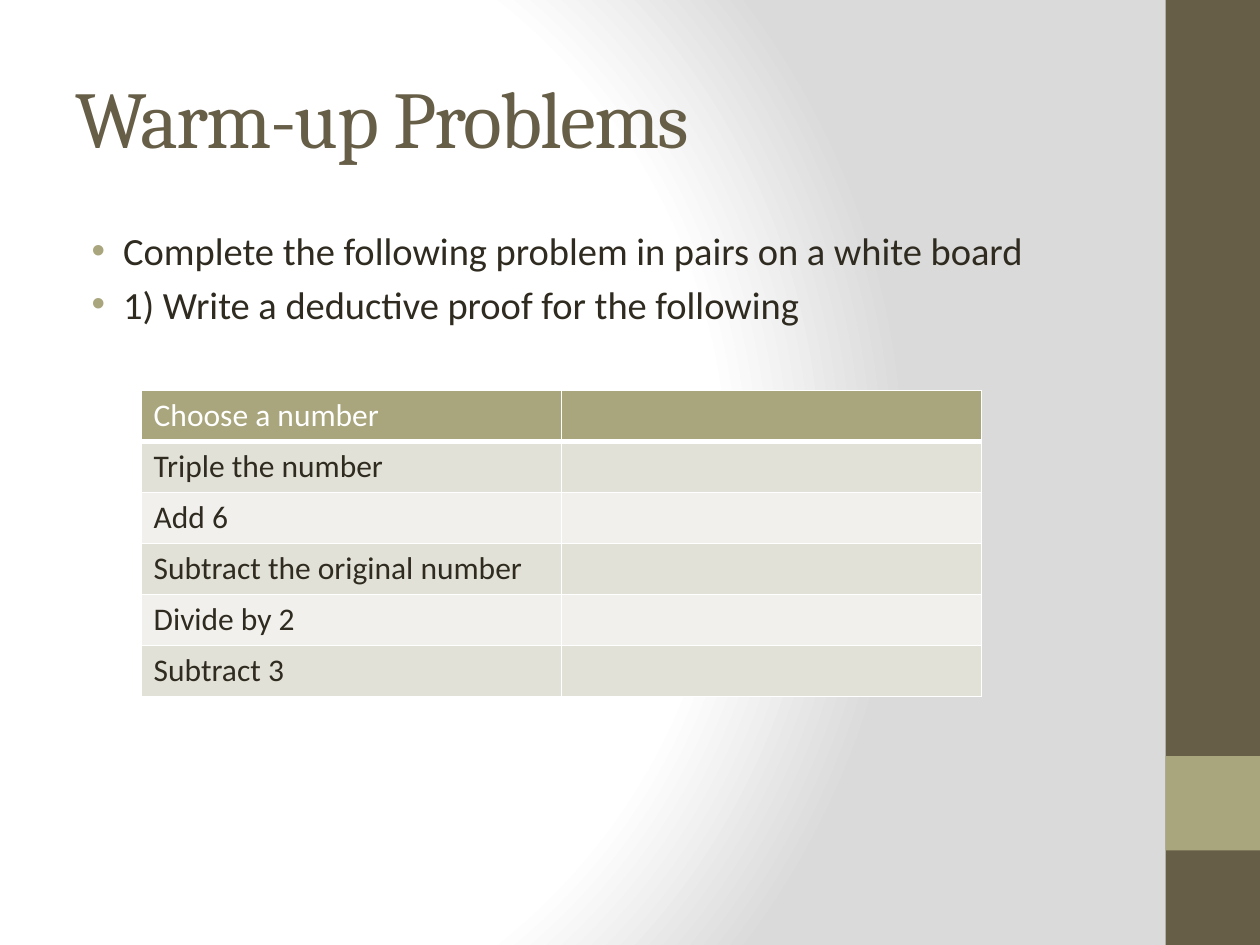
import pptx
import pptx.dml.color
import pptx.enum.shapes
import pptx.enum.text
import pptx.oxml
import pptx.oxml.ns
import pptx.util

Inches, Pt = pptx.util.Inches, pptx.util.Pt
NS = pptx.oxml.ns.nsdecls("a")
BROWN, OLIVE, INK, WHITE = "675E47", "A9A57C", "2F2B20", "FFFFFF"
BANDS = ["F1F0EC", "E2E1D7"]
WIDE, HIGH = Inches(10), Inches(7.5)


def rgb(code):
    return pptx.dml.color.RGBColor.from_string(code)


def style(para, size, name, code):
    """Give a paragraph's runs their font."""
    for run in para.runs:
        form = {"size": Pt(size), "name": name}
        for key, value in form.items():
            setattr(run.font, key, value)
        run.font.color.rgb = rgb(code)


deck = pptx.Presentation()
deck.slide_width, deck.slide_height = WIDE, HIGH
slide = deck.slides.add_slide(deck.slide_layouts[6])

# Background: circular gradient from white to grey
slide.background.fill.gradient()
grad = slide.element.find(".//" + pptx.oxml.ns.qn("a:gradFill"))
stops = "".join(
    f'<a:gs pos="{pos * 1000}"><a:srgbClr val="{code}"/></a:gs>'
    for pos, code in [(0, WHITE), (75, WHITE), (100, "DADADA")])
grad.getparent().replace(grad, pptx.oxml.parse_xml(
    f'<a:gradFill {NS} rotWithShape="1"><a:gsLst>{stops}</a:gsLst>'
    '<a:path path="circle"><a:fillToRect l="20000" t="50000" r="100000" b="50000"/>'
    '</a:path></a:gradFill>'))

# Side strip, with an accent square near its foot
side = Inches(0.75)
for top, tall, code in [(0, HIGH, BROWN), (int(HIGH * 0.8), side, OLIVE)]:
    bar = slide.shapes.add_shape(
        pptx.enum.shapes.MSO_SHAPE.RECTANGLE, WIDE - side, top, side, tall)
    bar.shadow.inherit = False
    bar.fill.solid()
    bar.fill.fore_color.rgb = rgb(code)
    bar.line.fill.background()

# Title and body boxes share one column
left, span = int(WIDE * 0.05), Inches(8.33)
title = slide.shapes.add_textbox(left, int(HIGH * 0.04), span, Inches(1.25)).text_frame
body = slide.shapes.add_textbox(left, Inches(1.75), span, int(HIGH * 0.7)).text_frame
title.word_wrap = body.word_wrap = True
title.vertical_anchor = pptx.enum.text.MSO_ANCHOR.MIDDLE
title.text = "Warm-up Problems"
style(title.paragraphs[0], 46, "Cambria", BROWN)
title.paragraphs[0].runs[0].font._element.set("spc", "-100")

body.text = ("Complete the following problem in pairs on a white board\n"
             "1) Write a deductive proof for the following")
for i, para in enumerate(body.paragraphs):
    props = para._p.get_or_add_pPr()
    props.set("marL", str(Inches(0.38)))
    props.set("indent", str(Inches(-0.25)))
    for mark in [f'<a:buClr {NS}><a:srgbClr val="{OLIVE}"/></a:buClr>',
                 f'<a:buFont {NS} typeface="Arial"/>',
                 f'<a:buChar {NS} char="•"/>']:
        props.append(pptx.oxml.parse_xml(mark))
    if i:
        para.space_before = Pt(4.4)
    style(para, 22, "Calibri", INK)

# Proof table: steps on the left, blank answers on the right
steps = ["Choose a number", "Triple the number", "Add 6",
         "Subtract the original number", "Divide by 2", "Subtract 3"]
row = Inches(0.405)
table = slide.shapes.add_table(
    len(steps), 2, Inches(1.12), Inches(3.1), Inches(6.67), row * len(steps)).table
table.first_row = table.horz_banding = False
for r, step in enumerate(steps):
    table.rows[r].height = row
    table.cell(r, 0).text = step
    for cell in table.rows[r].cells:
        style(cell.text_frame.paragraphs[0], 18, "Calibri", INK if r else WHITE)
        props = cell._tc.get_or_add_tcPr()
        for edge in "LRTB":
            thick = Pt(3 if r == 0 and edge == "B" else 1)
            props.append(pptx.oxml.parse_xml(
                f'<a:ln{edge} {NS} w="{thick}"><a:solidFill>'
                f'<a:srgbClr val="{WHITE}"/></a:solidFill></a:ln{edge}>'))
        cell.fill.solid()
        cell.fill.fore_color.rgb = rgb(BANDS[r % 2] if r else OLIVE)

deck.save("out.pptx")
